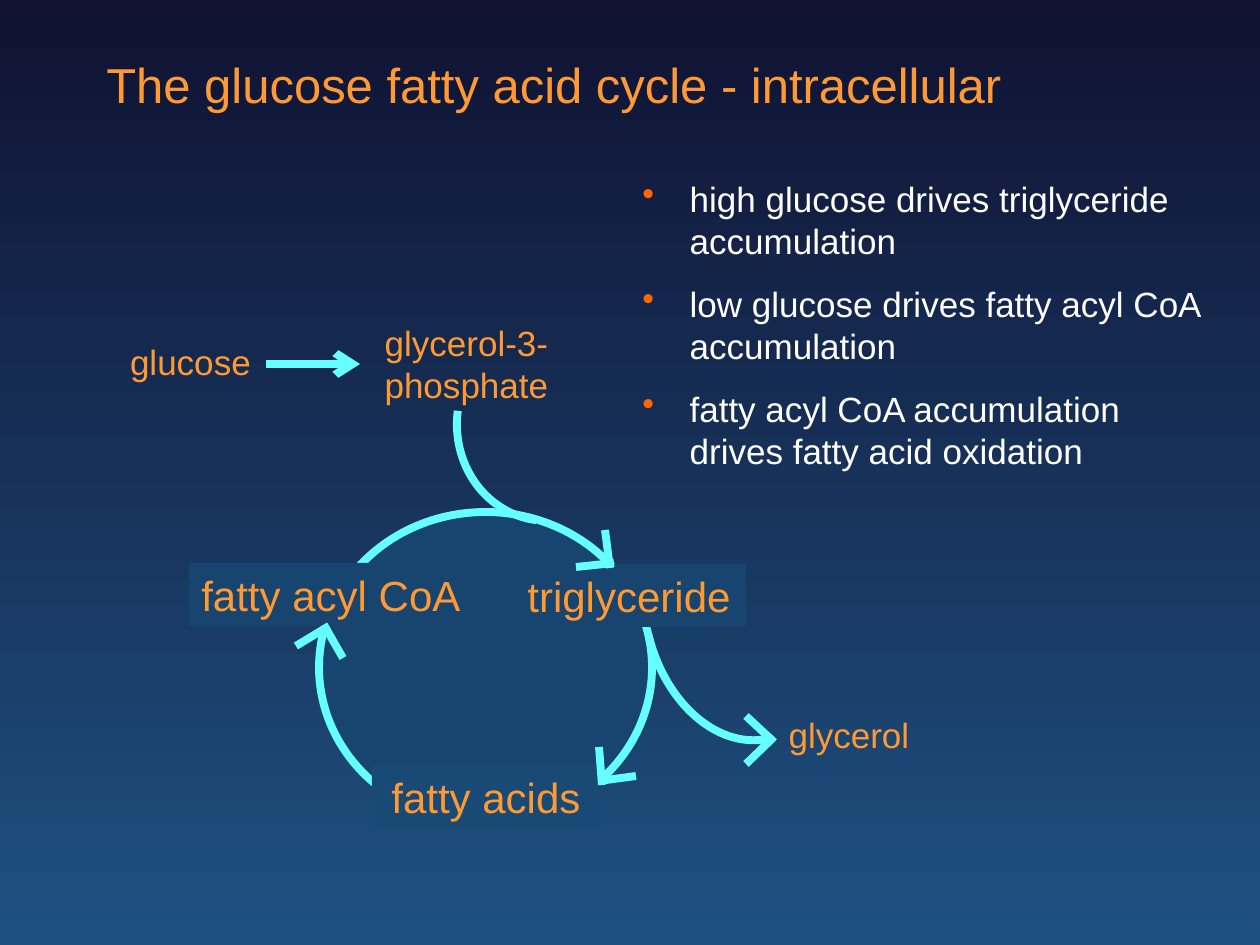
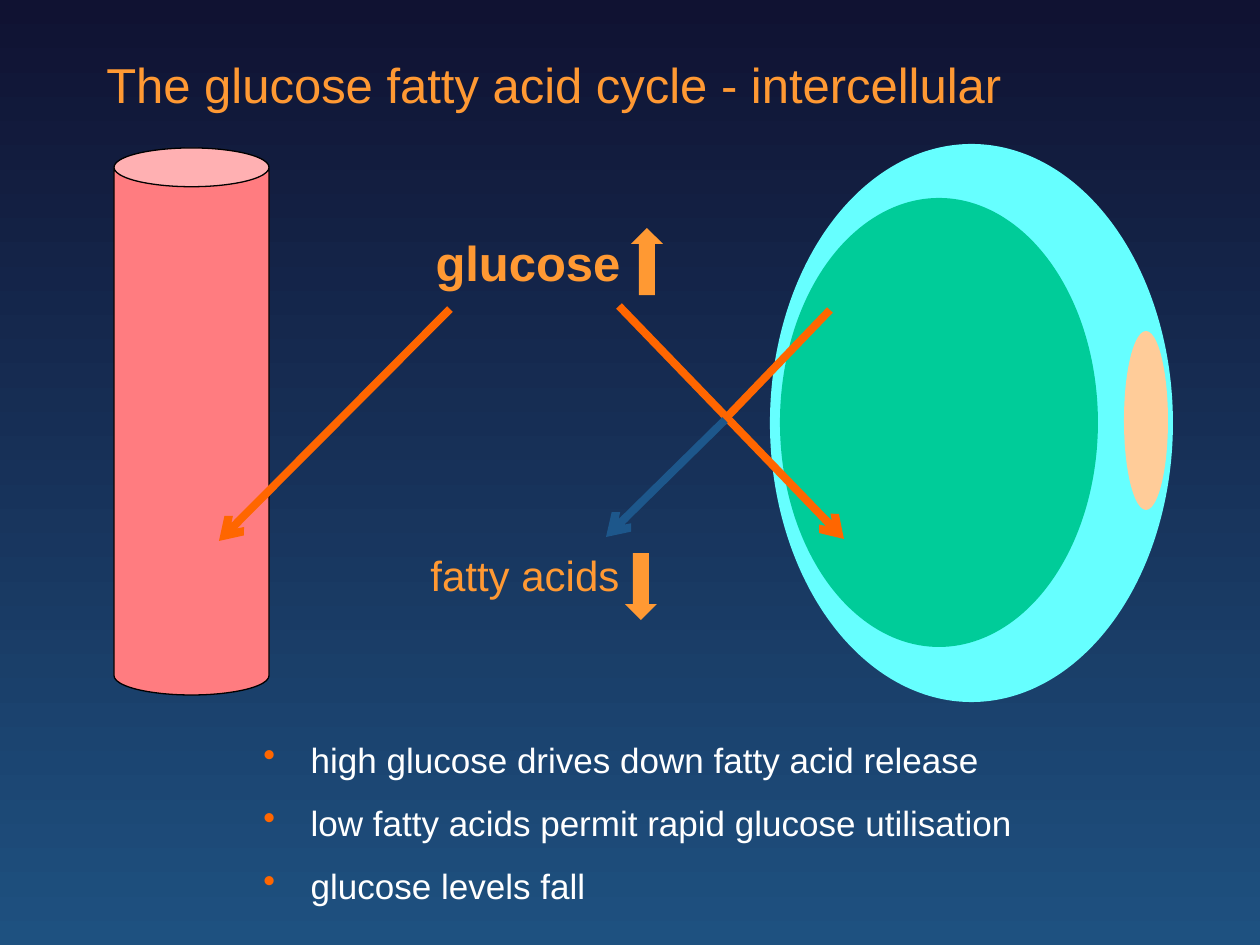
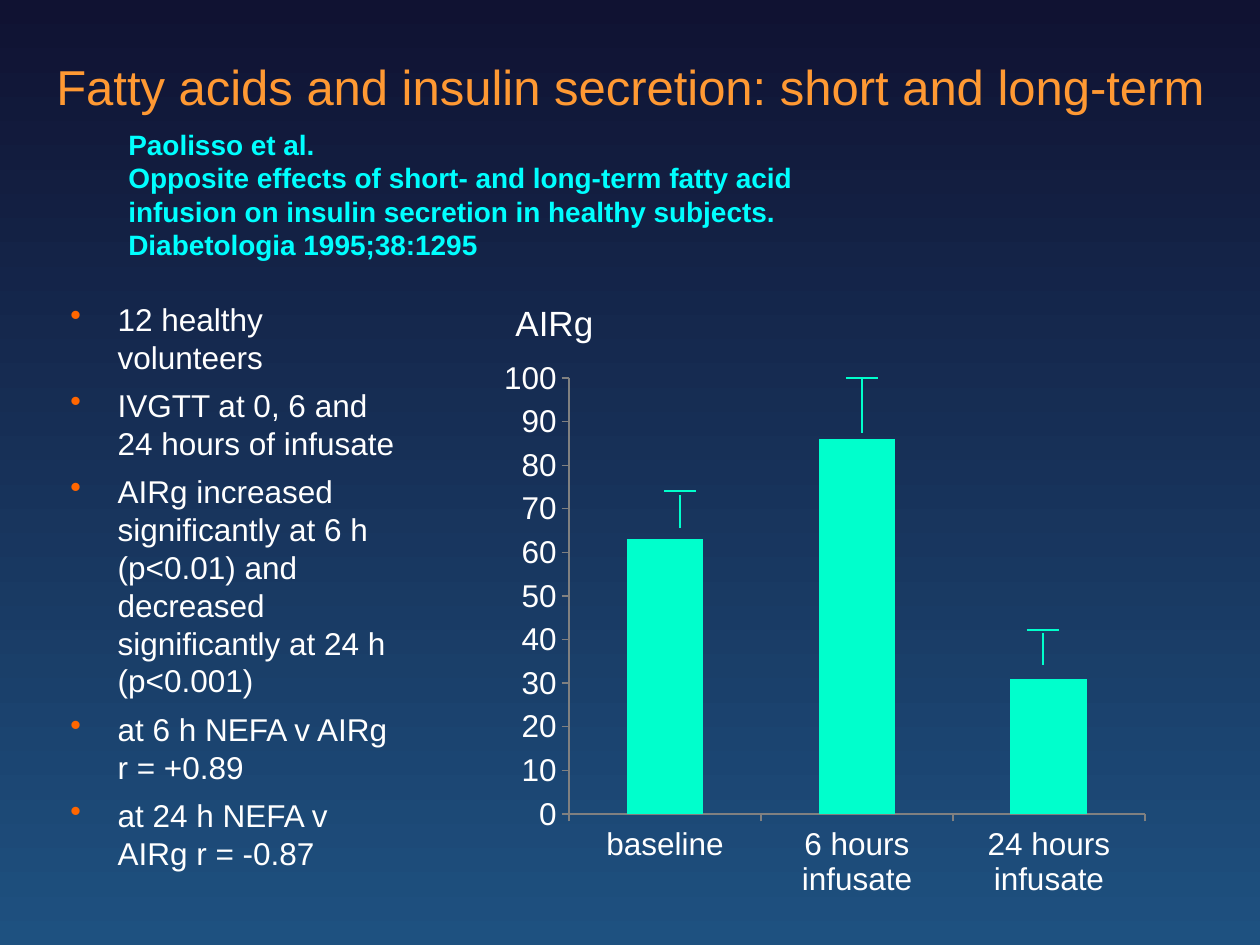
from lxml.etree import SubElement
from pptx import Presentation
from pptx.chart.data import CategoryChartData
from pptx.dml.color import RGBColor
from pptx.enum.chart import XL_CHART_TYPE as ChartType, XL_TICK_MARK as TickMark
from pptx.enum.shapes import MSO_CONNECTOR as Connector, MSO_SHAPE as Preset
from pptx.enum.text import MSO_AUTO_SIZE as AutoSize, PP_ALIGN as Align
from pptx.oxml import parse_xml
from pptx.oxml.ns import nsdecls, qn
from pptx.util import Emu, Pt

PX = 914400 / 126
FONT = "Arial"
COLORS = {
    name: RGBColor.from_string(value)
    for name, value in {
        "night": "101232",
        "sea": "1E5180",
        "title": "FF9933",
        "body": "FFFFFF",
        "bullet": "FF6600",
        "cycle": "66FFFF",
        "cycle_fill": "17456F",
        "acids_fill": "194975",
        "faded": "1D578B",
        "fat": "00CC99",
        "nucleus": "FFCC99",
        "vessel": "FF7C80",
        "outline": "000000",
        "citation": "00FFFF",
        "bar": "00FFCC",
        "axis": "808080",
    }.items()
}


def add_text(slide, text, box, size=20, color="title", bold=False, align=Align.LEFT,
             wrap=True, fill=None, bullet=False, after=0):
    shape = slide.shapes.add_textbox(*[Emu(round(value * PX)) for value in box])
    if fill:
        shape.fill.solid()
        shape.fill.fore_color.rgb = COLORS[fill]
    frame = shape.text_frame
    frame.word_wrap = wrap
    frame.auto_size = AutoSize.SHAPE_TO_FIT_TEXT
    frame.text = text
    for paragraph in frame.paragraphs:
        paragraph.alignment = align
        paragraph.space_after = Pt(after)
        font = paragraph.runs[0].font
        font.name, font.size, font.bold = FONT, Pt(size), bold
        font.color.rgb = COLORS[color]
        if bullet:
            properties = paragraph._p.get_or_add_pPr()
            properties.set("marL", "342900")
            properties.set("indent", "-342900")
            bullet_color = SubElement(properties, qn("a:buClr"))
            SubElement(bullet_color, qn("a:srgbClr"), val=str(COLORS["bullet"]))
            SubElement(properties, qn("a:buChar"), char="•")


def add_line(slide, start, end, color="cycle", width=4.5, arrow=False):
    points = [Emu(round(value * PX)) for value in (*start, *end)]
    connector = slide.shapes.add_connector(Connector.STRAIGHT, *points)
    connector.line.color.rgb = COLORS[color]
    connector.line.width = Pt(width)
    if arrow:
        SubElement(connector.line._get_or_add_ln(), qn("a:tailEnd"), type="arrow")
    SubElement(connector._element.spPr, qn("a:effectLst"))


presentation = Presentation()
presentation.slide_width = Emu(round(1260 * PX))
presentation.slide_height = Emu(round(945 * PX))
background = presentation.slide_master.background.fill
background.gradient()
background.gradient_angle = 270
for stop, position, color in zip(background.gradient_stops, (0, 1), ("night", "sea")):
    stop.position = position
    stop.color.rgb = COLORS[color]

titles = [
    ("The glucose fatty acid cycle - intracellular", (94, 48, 931, 72)),
    ("The glucose fatty acid cycle - intercellular", (94, 48, 931, 72)),
    ("Fatty acids and insulin secretion: short and long-term", (44, 50, 1186, 72)),
]
slides = []
for title, box in titles:
    slide = presentation.slides.add_slide(presentation.slide_layouts[6])
    add_text(slide, title, box, size=28, wrap=False)
    slides.append(slide)
intracellular, intercellular, secretion = slides

drawings = [
    (intracellular, Preset.OVAL, (319, 512, 333, 311), 0, "cycle_fill", "cycle", 4.5),
    (intracellular, Preset.ARC, (457, 324, 184, 197), 187.3, None, "cycle", 4.5),
    (intracellular, Preset.ARC, (646, 485, 186, 257), 166.3, None, "cycle", 4.5),
    (intercellular, Preset.OVAL, (770, 144, 403, 558), 0, "cycle", None, 0),
    (intercellular, Preset.OVAL, (780, 198, 318, 449), 0, "fat", None, 0),
    (intercellular, Preset.OVAL, (1124, 331, 44, 179), 0, "nucleus", None, 0),
    (intercellular, Preset.CAN, (114, 148, 155, 547), 0, "vessel", "outline", 0.75),
    (intercellular, Preset.UP_ARROW, (631, 228, 32, 67), 0, "title", None, 0),
    (intercellular, Preset.DOWN_ARROW, (625, 553, 32, 67), 0, "title", None, 0),
]
for slide, preset, box, rotation, fill, line, width in drawings:
    shape = slide.shapes.add_shape(preset, *[Emu(round(value * PX)) for value in box])
    shape.shadow.inherit = False
    shape.rotation = rotation
    if fill:
        shape.fill.solid()
        shape.fill.fore_color.rgb = COLORS[fill]
    else:
        shape.fill.background()
    if line:
        shape.line.color.rgb = COLORS[line]
        shape.line.width = Pt(width)
    else:
        shape.line.fill.background()

add_text(intracellular, "triglyceride", (515, 564, 231, 63), size=24, fill="cycle_fill")
add_text(intracellular, "fatty acyl CoA", (189, 563, 315, 63), size=24, fill="cycle_fill")
add_text(intracellular, "fatty acids", (372, 765, 228, 63), size=24, fill="acids_fill",
         align=Align.CENTER)
for label, box in [
    ("glycerol", (760, 707, 178, 55)),
    ("glycerol-3-phosphate", (296, 315, 341, 97)),
    ("glucose", (20, 334, 341, 55)),
]:
    add_text(intracellular, label, box, align=Align.CENTER)
for start, end in [
    ((343, 658), (324, 625)),
    ((296, 646), (329, 626)),
    ((576, 567), (614, 563)),
    ((605, 530), (610, 568)),
    ((599, 747), (602, 785)),
    ((636, 776), (599, 781)),
    ((746, 764), (774, 737)),
    ((746, 716), (774, 742)),
]:
    add_line(intracellular, start, end)
add_line(intracellular, (266, 364), (360, 364), arrow=True)
add_text(
    intracellular,
    "high glucose drives triglyceride accumulation\n"
    "low glucose drives fatty acyl CoA accumulation\n"
    "fatty acyl CoA accumulation drives fatty acid oxidation",
    (630, 171, 591, 310), color="body", bullet=True, after=12,
)

add_text(intercellular, "glucose", (409, 226, 238, 72), size=28, bold=True, align=Align.CENTER)
add_text(intercellular, "fatty acids", (411, 543, 228, 63), size=24, align=Align.CENTER)
for start, end, color, arrow in [
    ((619, 306), (844, 539), "bullet", True),
    ((450, 309), (219, 541), "bullet", True),
    ((830, 310), (728, 416), "bullet", False),
    ((725, 420), (606, 537), "faded", True),
]:
    add_line(intercellular, start, end, color=color, arrow=arrow)
add_text(
    intercellular,
    "high glucose drives down fatty acid release\n"
    "low fatty acids permit rapid glucose utilisation\n"
    "glucose levels fall",
    (251, 732, 869, 183), color="body", bullet=True, after=12,
)

add_text(
    secretion,
    "Paolisso et al.\n"
    "Opposite effects of short- and long-term fatty acid infusion on insulin secretion "
    "in healthy subjects.\n"
    "Diabetologia 1995;38:1295",
    (116, 121, 727, 149), size=16, color="citation", bold=True,
)
chart_data = CategoryChartData()
chart_data.categories = ["baseline", "6 hours infusate", "24 hours infusate"]
chart_data.add_series("AIRg", (63, 86, 31))
chart_box = [Emu(round(value * PX)) for value in (491, 349, 668, 559)]
chart = secretion.shapes.add_chart(ChartType.COLUMN_CLUSTERED, *chart_box, chart_data).chart
chart.has_legend = False
chart.has_title = False
chart.font.name = FONT
chart.font.size = Pt(18)
chart.font.color.rgb = COLORS["body"]
for axis in (chart.category_axis, chart.value_axis):
    axis.has_major_gridlines = False
    axis.major_tick_mark = TickMark.OUTSIDE
    axis.format.line.color.rgb = COLORS["axis"]
chart.value_axis.minimum_scale = 0
chart.value_axis.maximum_scale = 100
chart.value_axis.major_unit = 10
plot = chart.plots[0]
plot.gap_width = 150
plot.vary_by_categories = False
bars = plot.series[0].format.fill
bars.solid()
bars.fore_color.rgb = COLORS["bar"]
plot_area = chart._chartSpace.chart.plotArea
for layout in plot_area.findall(qn("c:layout")):
    plot_area.remove(layout)
plot_area.insert(0, parse_xml(
    f'<c:layout {nsdecls("c")}><c:manualLayout><c:layoutTarget val="inner"/>'
    '<c:xMode val="edge"/><c:yMode val="edge"/><c:x val="0.117"/><c:y val="0.052"/>'
    '<c:w val="0.862"/><c:h val="0.78"/></c:manualLayout></c:layout>'
))

for center, cap, top, bottom in [
    (680, 491, 495, 528),
    (862, 378, 379, 433),
    (1043, 630, 633, 665),
]:
    add_line(secretion, (center, bottom), (center, top), color="bar", width=0.75)
    add_line(secretion, (center - 16, cap), (center + 16, cap), color="bar", width=0.75)
add_text(
    secretion,
    "12 healthy volunteers\n"
    "IVGTT at 0, 6 and 24 hours of infusate\n"
    "AIRg increased significantly at 6 h (p<0.01) and decreased significantly at 24 h (p<0.001)\n"
    "at 6 h NEFA v AIRg r = +0.89\n"
    "at 24 h NEFA v AIRg r = -0.87",
    (58, 294, 359, 590), size=18, color="body", bullet=True, after=6,
)
add_text(secretion, "AIRg", (503, 295, 105, 55), color="body", wrap=False)

presentation.save("out.pptx")
